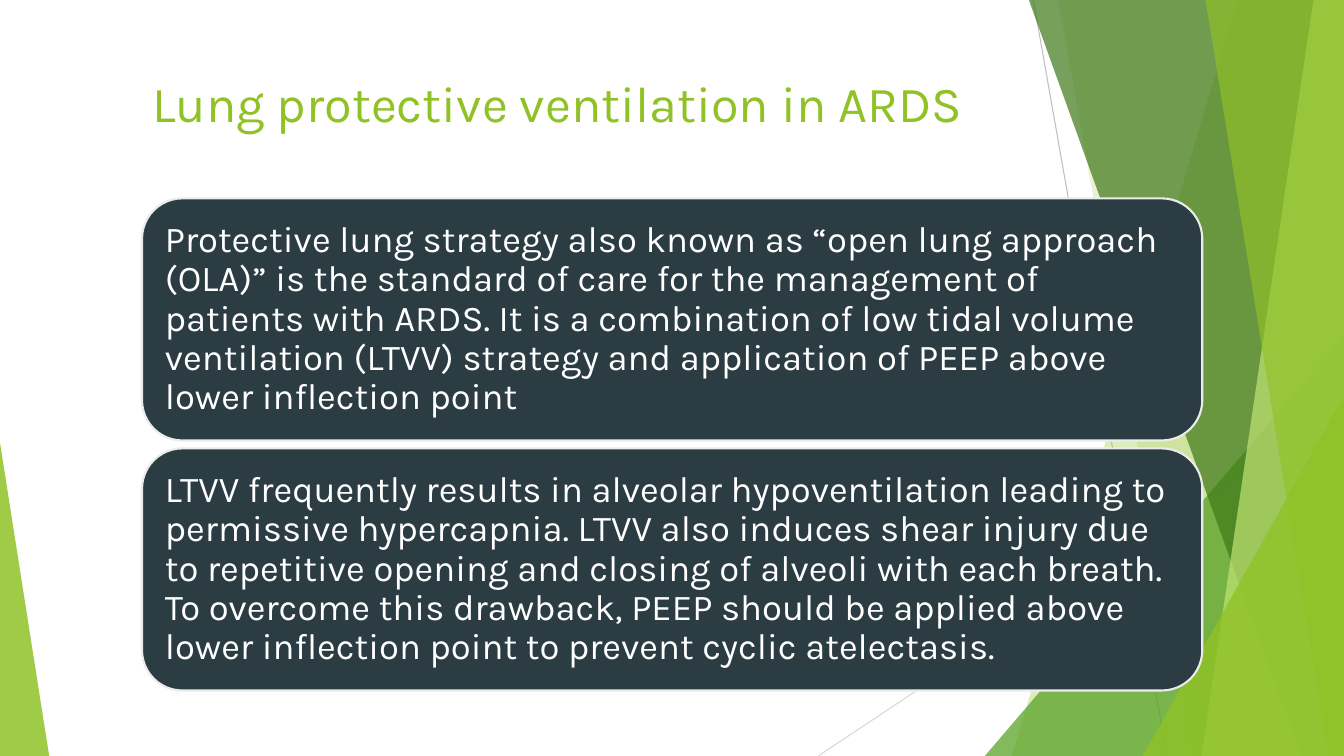
from dataclasses import dataclass

from lxml import etree
from pptx import Presentation
from pptx import util as u
from pptx.dml import color
from pptx.enum import shapes, text
from pptx.oxml import ns


@dataclass(frozen=True)
class Theme:
    """Hold the colours, font and type sizes of the deck."""
    lime: str = "90C226"
    pale_lime: str = "C0E474"
    leaf: str = "54A021"
    forest: str = "3F7819"
    slate: str = "2C3C43"
    white: str = "FFFFFF"
    panel_edge: str = "EBEBEB"
    mid_grey: str = "BFBFBF"
    light_grey: str = "D9D9D9"
    font: str = "Karla"
    title_size: int = 36
    body_size: int = 26


THEME = Theme()
SLIDE_BOX = (0, 0, 33.87, 19.05)
TITLE_BOX = (3.58, 1.7, 28.32, 3.05)
PANELS_BOX = (3.58, 5, 26.72, 12.4)
PANEL_GAP = 0.2

TITLE = "Lung protective ventilation in ARDS"
POINTS = [
    "Protective lung strategy also known as “open lung approach (OLA)” is the standard of care "
    "for the management of patients with ARDS. It is a combination of low tidal volume "
    "ventilation (LTVV) strategy and application of PEEP above lower inflection point",
    "LTVV frequently results in alveolar hypoventilation leading to permissive hypercapnia. "
    "LTVV also induces shear injury due to repetitive opening and closing of alveoli with each "
    "breath. To overcome this drawback, PEEP should be applied above lower inflection point to "
    "prevent cyclic atelectasis.",
]


def apply(target, formats):
    """Set each attribute of the target from a dict of format values."""
    for name, value in formats.items():
        setattr(target, name, value)


def rgb(code):
    """Turn a hex code into a colour."""
    return color.RGBColor.from_string(code)


def write(frame, words, size, ink, frame_formats, paragraph_formats):
    """Write one formatted paragraph into a text frame."""
    apply(frame, {"word_wrap": True, "auto_size": text.MSO_AUTO_SIZE.NONE, **frame_formats})
    paragraph = frame.paragraphs[0]
    apply(paragraph, {"alignment": text.PP_ALIGN.LEFT, **paragraph_formats})
    run = paragraph.add_run()
    run.text = words
    apply(run.font, {"name": THEME.font, "size": u.Pt(size)})
    run.font.color.rgb = rgb(ink)


def tint(facet, fill, opacity):
    """Give a facet a see-through fill and no outline."""
    facet.shadow.inherit = False
    facet.fill.solid()
    facet.fill.fore_color.rgb = rgb(fill)
    facet.line.fill.background()
    swatch = facet.element.spPr.find(ns.qn("a:solidFill")).find(ns.qn("a:srgbClr"))
    etree.SubElement(swatch, ns.qn("a:alpha"), val=str(opacity * 1000))


def add_hairline(slide, start, end, ink):
    """Draw one thin grey line between two points."""
    hairline = slide.shapes.add_connector(
        shapes.MSO_CONNECTOR.STRAIGHT, *(u.Cm(length) for length in start + end))
    hairline.line.color.rgb = rgb(ink)
    hairline.line.width = u.Pt(0.75)
    etree.SubElement(hairline.element.spPr, ns.qn("a:effectLst"))


def add_band(slide, box, top_x, bottom_x, fill, opacity):
    """Draw a slanted band that reaches the right edge of the box."""
    left, top, width, height = box
    right, bottom = left + width, top + height
    corners = [(left + top_x, top), (right, top), (right, bottom), (left + bottom_x, bottom)]
    points = [(u.Cm(x), u.Cm(y)) for x, y in corners]
    outline = slide.shapes.build_freeform(*points[0])
    outline.add_line_segments(points[1:], close=True)
    tint(outline.convert_to_shape(), fill, opacity)


def add_wedge(slide, box, start_x, start_y, width, apex, fill, opacity):
    """Draw a right-angled wedge that stands on the bottom of the box."""
    left, top, _, height = box
    wedge = slide.shapes.add_shape(
        shapes.MSO_SHAPE.ISOSCELES_TRIANGLE, u.Cm(left + start_x), u.Cm(top + start_y),
        u.Cm(width), u.Cm(height - start_y))
    wedge.adjustments[0] = apex
    tint(wedge, fill, opacity)


def add_facets(slide, box):
    """Draw the green facets along the edges of the box."""
    left, top, width, height = box
    add_hairline(slide, (left + 26.04, top), (left + 29.41, top + height), THEME.mid_grey)
    add_hairline(slide, (left + width, top + 10.24), (left + 20.62, top + height),
                 THEME.light_grey)
    add_band(slide, box, 31.19, 25.5, THEME.lime, 30)
    add_band(slide, box, 26.67, 30.05, THEME.lime, 20)
    add_wedge(slide, box, 24.82, 8.46, width - 24.82, 1, THEME.leaf, 72)
    add_band(slide, box, 25.93, 32.79, THEME.forest, 70)
    add_band(slide, box, 33.1, 30.28, THEME.pale_lime, 70)
    add_band(slide, box, 30.38, 33.48, THEME.lime, 65)
    add_wedge(slide, box, 28.8, 9.98, width - 28.8, 1, THEME.lime, 80)
    add_wedge(slide, box, 0, 11.15, 1.24, 0, THEME.lime, 85)


def place_title(slide, box, words):
    """Move the title placeholder into the box, above the facets."""
    title = slide.shapes.title
    slide.shapes.element.append(title.element)
    apply(title, dict(zip(("left", "top", "width", "height"), map(u.Cm, box))))
    write(title.text_frame, words, THEME.title_size, THEME.lime,
          {"vertical_anchor": text.MSO_ANCHOR.TOP}, {})


def add_panels(slide, box, points):
    """Stack one rounded panel for each point, equally high, in the box."""
    left, top, width, height = box
    panel_height = (height - PANEL_GAP * (len(points) - 1)) / len(points)
    margins = ("margin_left", "margin_top", "margin_right", "margin_bottom")
    for index, point in enumerate(points):
        panel = slide.shapes.add_shape(
            shapes.MSO_SHAPE.ROUNDED_RECTANGLE, u.Cm(left),
            u.Cm(top + index * (panel_height + PANEL_GAP)), u.Cm(width), u.Cm(panel_height))
        panel.shadow.inherit = False
        panel.fill.solid()
        panel.fill.fore_color.rgb = rgb(THEME.slate)
        panel.line.color.rgb = rgb(THEME.panel_edge)
        panel.line.width = u.Pt(1.5)
        write(panel.text_frame, point, THEME.body_size, THEME.white,
              {"vertical_anchor": text.MSO_ANCHOR.MIDDLE, **dict.fromkeys(margins, u.Cm(0.28))},
              {"line_spacing": 0.9})


def main():
    """Build the slide and save it."""
    deck = Presentation()
    apply(deck, {"slide_width": u.Cm(SLIDE_BOX[2]), "slide_height": u.Cm(SLIDE_BOX[3])})
    slide = deck.slides.add_slide(deck.slide_layouts.get_by_name("Title Only"))
    add_facets(slide, SLIDE_BOX)
    place_title(slide, TITLE_BOX, TITLE)
    add_panels(slide, PANELS_BOX, POINTS)
    deck.save("out.pptx")


if __name__ == "__main__":
    main()
